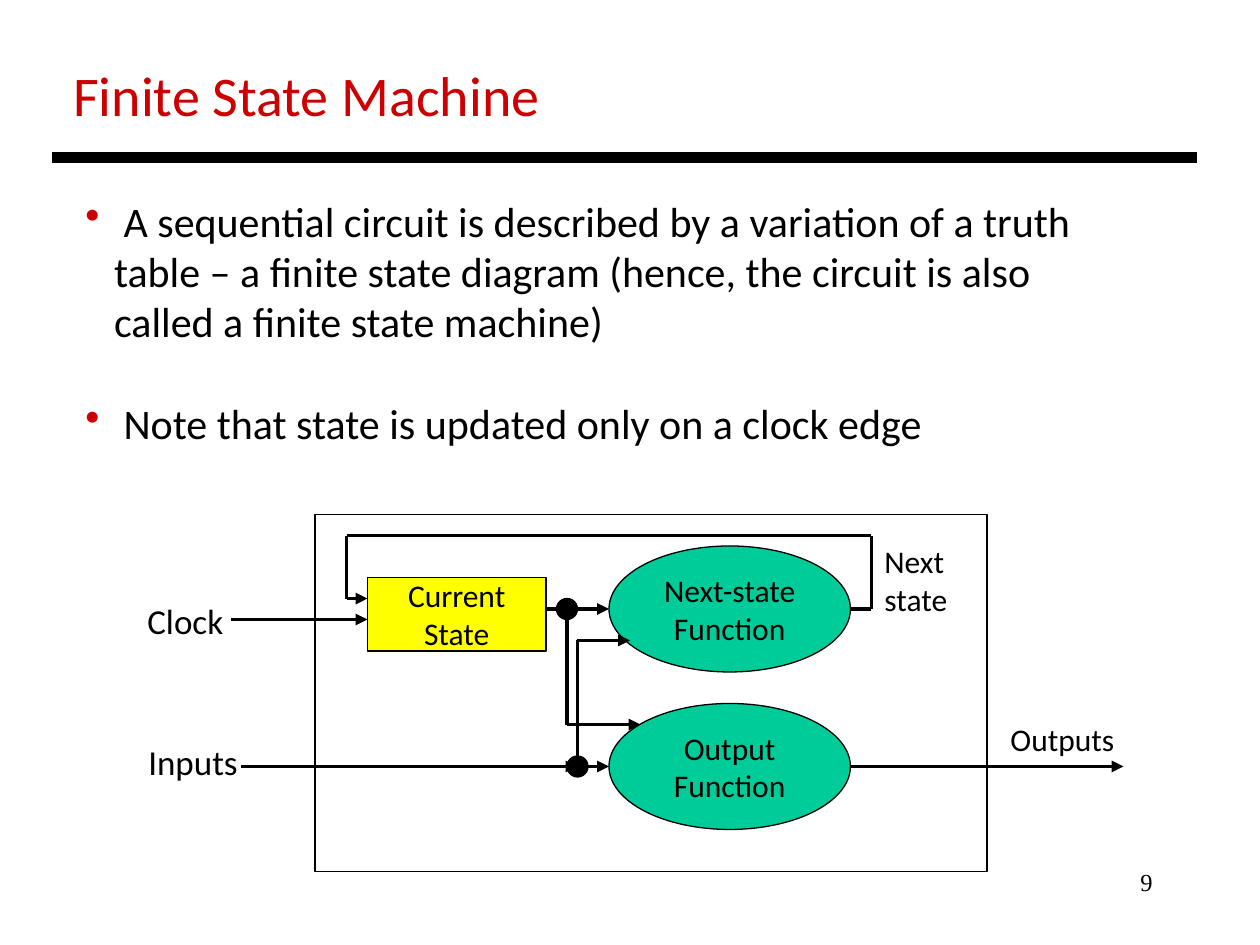
from lxml import etree
from pptx import Presentation
from pptx.dml.color import RGBColor
from pptx.enum.shapes import MSO_CONNECTOR, MSO_SHAPE
from pptx.enum.text import MSO_ANCHOR, MSO_AUTO_SIZE, PP_ALIGN
from pptx.oxml.ns import qn
from pptx.util import Cm, Pt

STRAIGHT = MSO_CONNECTOR.STRAIGHT
RECTANGLE, OVAL = MSO_SHAPE.RECTANGLE, MSO_SHAPE.OVAL
TOP, MIDDLE = MSO_ANCHOR.TOP, MSO_ANCHOR.MIDDLE
LEFT, CENTER, RIGHT = PP_ALIGN.LEFT, PP_ALIGN.CENTER, PP_ALIGN.RIGHT
NO_AUTOFIT = MSO_AUTO_SIZE.NONE
BLACK, WHITE, RED, GREEN, YELLOW = "000000", "FFFFFF", "CC0000", "00CC99", "FFFF00"
GRID = Cm(2.54) // 12  # the diagram sits on a grid of twelve steps per inch


def color(hex_string):
    return RGBColor.from_string(hex_string)


def write(text_frame, text, size, hex_string=BLACK, font="Calibri",
          align=LEFT, anchor=TOP, wrap=False):
    text_frame.text = text
    text_frame.auto_size = NO_AUTOFIT
    text_frame.word_wrap = wrap
    text_frame.vertical_anchor = anchor
    for paragraph in text_frame.paragraphs:
        paragraph.alignment = align
        for run in paragraph.runs:
            run.font.size = Pt(size)
            run.font.name = font
            run.font.color.rgb = color(hex_string)


presentation = Presentation()
presentation.slide_width, presentation.slide_height = Cm(25.4), Cm(19.05)
slide = presentation.slides.add_slide(presentation.slide_layouts[5])

# Title
title = slide.shapes.title
title.left, title.top, title.width, title.height = Cm(1.22), Cm(1.09), Cm(10.01), Cm(1.63)
write(title.text_frame, "Finite State Machine", 32, RED)

# Bulleted text
body = slide.shapes.add_textbox(Cm(1.47), Cm(3.81), Cm(20.8), Cm(5.38))
write(body.text_frame,
      " A sequential circuit is described by a variation of a truth table – "
      "a finite state diagram (hence, the circuit is also called a finite state machine)\n"
      " Note that state is updated only on a clock edge", 24, wrap=True)
for paragraph in body.text_frame.paragraphs:
    properties = paragraph._p.get_or_add_pPr()
    properties.set("marL", str(Cm(0.58)))
    properties.set("indent", str(-Cm(0.58)))
    bullet_color = etree.SubElement(properties, qn("a:buClr"))
    etree.SubElement(bullet_color, qn("a:srgbClr"), val=RED)
    etree.SubElement(properties, qn("a:buChar"), char="•")
body.text_frame.paragraphs[1].space_before = Pt(29)

# Diagram shapes: preset, left, top, width, height in grid steps, fill, text
diagram_shapes = [
    (RECTANGLE, 30, 49, 64, 34, WHITE, ""),
    (OVAL, 58, 52, 23, 12, GREEN, "Next-state\nFunction"),
    (OVAL, 58, 67, 23, 12, GREEN, "Output\nFunction"),
    (RECTANGLE, 35, 55, 17, 7, YELLOW, "Current\nState"),
    (OVAL, 54, 72, 2, 2, BLACK, ""),
    (OVAL, 53, 57, 2, 2, BLACK, ""),
]
for preset, left, top, width, height, fill, text in diagram_shapes:
    shape = slide.shapes.add_shape(preset, left * GRID, top * GRID, width * GRID, height * GRID)
    shape.shadow.inherit = False
    shape.fill.solid()
    shape.fill.fore_color.rgb = color(fill)
    shape.line.color.rgb = color(BLACK)
    shape.line.width = Pt(0.75)
    if text:
        write(shape.text_frame, text, 18, align=CENTER, anchor=MIDDLE)

# Diagram labels: text, size, left, top, width, height in centimetres
labels = [
    ("Clock", 20, 2.72, 11.96, 2.06, 1.12),
    ("Inputs", 20, 2.74, 14.81, 2.34, 1.12),
    ("Next\nstate", 18, 17.58, 10.8, 1.78, 1.8),
    ("Outputs", 18, 20.12, 14.4, 2.62, 1.02),
]
for text, size, *box in labels:
    label = slide.shapes.add_textbox(*[Cm(length) for length in box])
    write(label.text_frame, text, size)

# Lines: from x, y to x, y in grid steps, width in points, arrowhead
lines = [
    (5, 15, 114, 15, 6, False),  # rule under the title
    (22, 59, 35, 59, 2.25, True),  # clock
    (23, 73, 55, 73, 2.25, True),  # inputs
    (52, 58, 58, 58, 2.25, True),  # current state to next-state function
    (52, 73, 58, 73, 2.25, True),  # inputs to output function
    (55, 73, 55, 61, 2.25, False),  # inputs to next-state function
    (55, 61, 60, 61, 2.25, True),
    (54, 58, 54, 69, 2.25, False),  # current state to output function
    (54, 69, 61, 69, 2.25, True),
    (81, 73, 107, 73, 2.25, True),  # outputs
    (81, 58, 83, 58, 2.25, False),  # next state back to current state
    (83, 58, 83, 51, 2.25, False),
    (33, 51, 83, 51, 2.25, False),
    (33, 57, 33, 51, 2.25, False),
    (33, 57, 35, 57, 2.25, True),
]
for *ends, width, has_arrow in lines:
    connector = slide.shapes.add_connector(STRAIGHT, *[step * GRID for step in ends])
    connector.line.color.rgb = color(BLACK)
    connector.line.width = Pt(width)
    if has_arrow:
        etree.SubElement(connector.line._get_or_add_ln(), qn("a:tailEnd"), type="triangle")
    etree.SubElement(connector._element.spPr, qn("a:effectLst"))

# Page number
page_number = slide.shapes.add_textbox(Cm(18.2), Cm(17.36), Cm(5.29), Cm(1.27))
write(page_number.text_frame, "9", 14, font="Times New Roman", align=RIGHT, wrap=True)

presentation.save("out.pptx")
